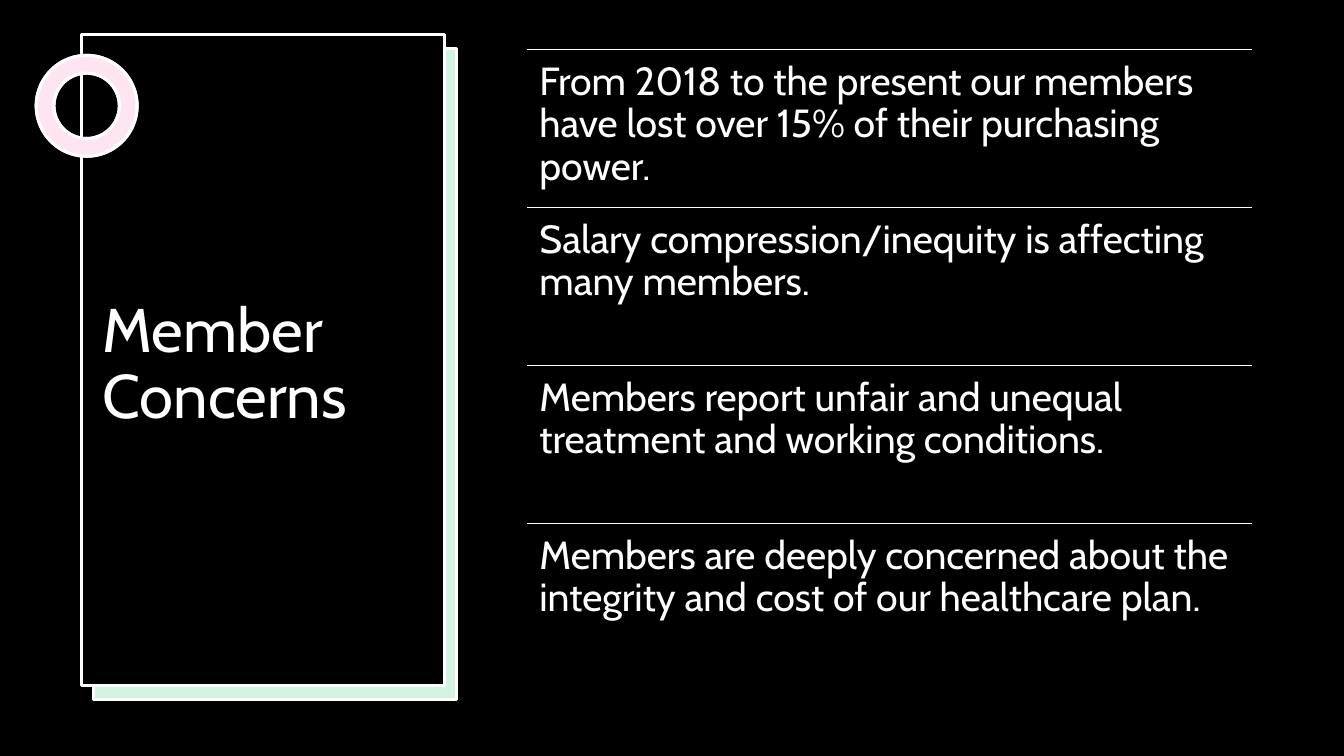
from dataclasses import dataclass
from typing import Optional

from lxml.etree import SubElement
from pptx import Presentation
from pptx.dml.color import RGBColor
from pptx.enum.shapes import MSO_CONNECTOR as Connector, MSO_SHAPE as Preset
from pptx.enum.text import MSO_ANCHOR as Anchor
from pptx.oxml.ns import qn
from pptx.util import Inches, Pt

FONT = "Cabin"
BLACK, WHITE = "000000", "FFFFFF"
GREEN, PINK, RULE = "21C46B", "FF80BD", "F3FFF8"

CONCERNS = [
    "From 2018 to the present our members have lost over 15% of their purchasing power.",
    "Salary compression/inequity is affecting many members.",
    "Members report unfair and unequal treatment and working conditions.",
    "Members are deeply concerned about the integrity and cost of our healthcare plan.",
]
LIST_LEFT, LIST_TOP, LIST_WIDTH, ROW_HEIGHT = 5.23, 0.49, 7.19, 1.567


@dataclass
class Decoration:
    preset: Preset
    left: float
    top: float
    width: float
    height: float
    fill: str
    opacity: Optional[int] = None  # percent
    outlined: bool = True
    thickness: Optional[float] = None  # ring band, share of the diameter


PANEL = (3.6, 6.46)
RING = (0.36, 0.55, 1, 1)
DECORATIONS = [
    Decoration(Preset.RECTANGLE, 0.92, 0.49, *PANEL, WHITE, outlined=False),
    Decoration(Preset.RECTANGLE, 0.93, 0.48, *PANEL, GREEN, opacity=20),
    Decoration(Preset.RECTANGLE, 0.81, 0.34, *PANEL, BLACK),
    Decoration(Preset.DONUT, *RING, WHITE, thickness=0.175),
    Decoration(Preset.DONUT, *RING, PINK, opacity=20, thickness=0.175),
]


def color(value: str) -> RGBColor:
    return RGBColor.from_string(value)


def draw_decoration(slide, item: Decoration) -> None:
    shape = slide.shapes.add_shape(
        item.preset, Inches(item.left), Inches(item.top), Inches(item.width), Inches(item.height))
    shape.shadow.inherit = False
    if item.thickness is not None:
        shape.adjustments[0] = item.thickness
    shape.fill.solid()
    shape.fill.fore_color.rgb = color(item.fill)
    if item.opacity is not None:
        fill_color = shape.element.spPr.find(qn("a:solidFill")).find(qn("a:srgbClr"))
        SubElement(fill_color, qn("a:alpha"), val=str(item.opacity * 1000))
    if item.outlined:
        shape.line.color.rgb = color(WHITE)
        shape.line.width = Pt(2.25)
    else:
        shape.line.fill.background()


def draw_rule(slide, left: float, top: float, width: float) -> None:
    rule = slide.shapes.add_connector(
        Connector.STRAIGHT, Inches(left), Inches(top), Inches(left + width), Inches(top))
    rule.line.color.rgb = color(RULE)
    rule.line.width = Pt(1)
    SubElement(rule.element.spPr, qn("a:effectLst"))


def add_text(slide, text: str, *, left: float, top: float, width: float, height: float,
             size: float, anchor: Anchor = Anchor.TOP,
             inset_x: float = 0.12, inset_y: float = 0.12) -> None:
    frame = slide.shapes.add_textbox(
        Inches(left), Inches(top), Inches(width), Inches(height)).text_frame
    frame.word_wrap = True
    frame.vertical_anchor = anchor
    frame.margin_left = frame.margin_right = Inches(inset_x)
    frame.margin_top = frame.margin_bottom = Inches(inset_y)
    paragraph = frame.paragraphs[0]
    paragraph.line_spacing = 0.9
    run = paragraph.add_run()
    run.text = text
    run.font.name = FONT
    run.font.size = Pt(size)
    run.font.color.rgb = color(WHITE)


def main() -> None:
    deck = Presentation()
    deck.slide_width, deck.slide_height = Inches(13.33), Inches(7.5)
    slide = deck.slides.add_slide(deck.slide_layouts[6])
    slide.background.fill.solid()
    slide.background.fill.fore_color.rgb = color(BLACK)

    # Title panel with its offset backing and ring
    for item in DECORATIONS:
        draw_decoration(slide, item)
    add_text(slide, "Member Concerns", left=0.92, top=1.31, width=3.4, height=4.63,
             size=44, anchor=Anchor.MIDDLE, inset_x=0.1, inset_y=0.05)

    # Concerns, each under a rule
    for row, concern in enumerate(CONCERNS):
        top = LIST_TOP + row * ROW_HEIGHT
        draw_rule(slide, LIST_LEFT, top, LIST_WIDTH)
        add_text(slide, concern, left=LIST_LEFT, top=top, width=LIST_WIDTH,
                 height=ROW_HEIGHT, size=28)

    deck.save("out.pptx")


if __name__ == "__main__":
    main()
